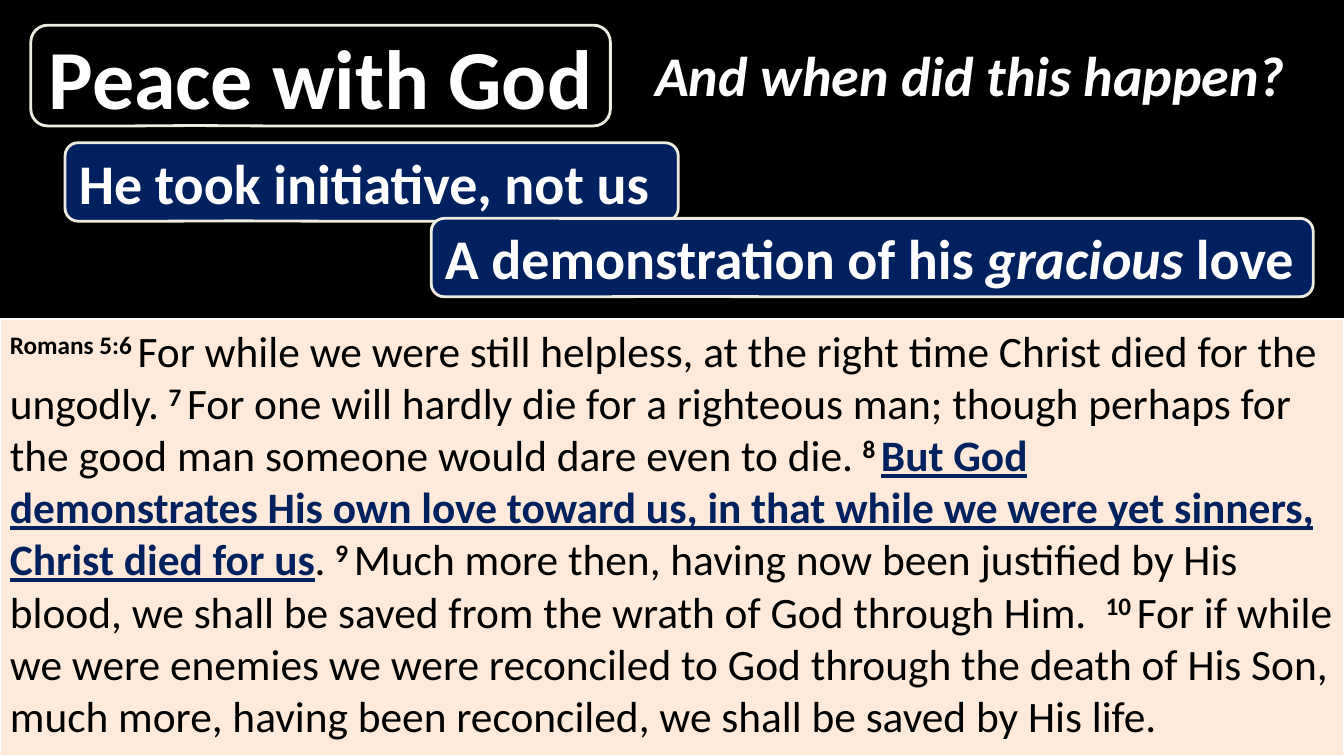
import pptx
import pptx.util
import pptx.dml.color
import pptx.enum.shapes
import pptx.enum.text
import pptx.oxml
import pptx.oxml.ns

Pt = pptx.util.Pt
SHAPES = pptx.enum.shapes.MSO_SHAPE
ALIGN = pptx.enum.text.PP_ALIGN
ANCHOR = pptx.enum.text.MSO_ANCHOR

WHITE, BLACK, NAVY, CREAM, PEACH = "FFFFFF", "000000", "002060", "EEECE1", "FDEADA"
CALLOUT_ADJUSTMENTS = (-0.219, 0.496, 0.167)
TITLE_BOX = (22, 18, 414, 72)
NO_BREAK_SPACE = chr(160)

# Each verse: number, then (text, is_key_phrase) parts; "_" stands for a no-break space
VERSES = [
    ("Romans 5:6_", [("For while we were still_helpless,_at the right time_Christ died for the ungodly._", False)]),
    ("7_", [("For one will hardly die for a righteous man; though perhaps for the good man "
             "someone would dare even to die._", False)]),
    ("8_", [("But God demonstrates_His own love toward us, in that while we were yet sinners, "
             "Christ died for us", True), ("._", False)]),
    ("9_", [("Much more then, having now been justified by His blood, we shall be saved_from the wrath_of God_"
             "through Him.  ", False)]),
    ("10_", [("For if while we were_enemies we were reconciled to God through the death of His Son, "
              "much more, having been reconciled, we shall be saved by His life._", False)]),
]


def color(value):
    return pptx.dml.color.RGBColor.from_string(value)


def paint(shape, fill, line, line_width):
    """Fill and outline a shape; None leaves that part out."""
    if fill:
        shape.fill.solid()
        shape.fill.fore_color.rgb = color(fill)
    else:
        shape.fill.background()
    if line:
        shape.line.color.rgb = color(line)
        shape.line.width = Pt(line_width)
    else:
        shape.line.fill.background()


def start_text(shape, size, ink, align, anchor):
    """Set up the text frame and return its first paragraph."""
    frame = shape.text_frame
    frame.word_wrap = True
    frame.auto_size = pptx.enum.text.MSO_AUTO_SIZE.NONE
    frame.vertical_anchor = anchor
    para = frame.paragraphs[0]
    para.alignment = align
    para.font.name = "Calibri"
    para.font.size = Pt(size)
    para.font.color.rgb = color(ink)
    return para


def add_span(para, text):
    span = para.add_run()
    span.text = text.replace("_", NO_BREAK_SPACE)
    return span


def write_heading(shape, size, align, parts):
    """Write bold white text; parts are (text, is_italic) pairs."""
    para = start_text(shape, size, WHITE, align, ANCHOR.MIDDLE)
    para.font.bold = True
    for text, is_italic in parts:
        add_span(para, text).font.italic = is_italic


def add_callout(page, box, fill, line):
    callout = page.shapes.add_shape(SHAPES.ROUNDED_RECTANGULAR_CALLOUT, *map(Pt, box))
    callout.shadow.inherit = False
    for index, value in enumerate(CALLOUT_ADJUSTMENTS):
        callout.adjustments[index] = value
    paint(callout, fill, line, 2)
    return callout


def add_title(page):
    """Set the title over a translucent callout frame."""
    frame = add_callout(page, TITLE_BOX, BLACK, CREAM)
    fill_color = frame._element.spPr.find(".//" + pptx.oxml.ns.qn("a:srgbClr"))
    fill_color.append(pptx.oxml.parse_xml(f'<a:alpha {pptx.oxml.ns.nsdecls("a")} val="64000"/>'))
    title = page.shapes.title
    title.left, title.top, title.width, title.height = map(Pt, TITLE_BOX)
    frame._element.addnext(title._element)
    write_heading(title, 60, ALIGN.CENTER, [("Peace with God", False)])


def add_passage(page):
    panel = page.shapes.add_shape(SHAPES.RECTANGLE, Pt(0), Pt(228), Pt(960), Pt(312))
    panel.shadow.inherit = False
    paint(panel, PEACH, WHITE, 1.5)
    para = start_text(panel, 31, BLACK, ALIGN.LEFT, ANCHOR.TOP)
    for number, parts in VERSES:
        marker = add_span(para, number)
        marker.font.bold = True
        marker.font._element.set("baseline", "30000")
        for text, is_key_phrase in parts:
            span = add_span(para, text)
            if is_key_phrase:
                span.font.bold = span.font.underline = True
                span.font.color.rgb = color(NAVY)


def main():
    deck = pptx.Presentation()
    deck.slide_width, deck.slide_height = Pt(960), Pt(540)
    page = deck.slides.add_slide(deck.slide_layouts[5])
    page.background.fill.solid()
    page.background.fill.fore_color.rgb = color(BLACK)

    add_passage(page)
    add_title(page)
    headings = [
        ((448, 17, 490, 72), None, None, ALIGN.CENTER, [("And when did this happen?", True)]),
        ((46.5, 102, 438, 56), NAVY, CREAM, ALIGN.LEFT, [("He took initiative, not us", False)]),
        ((308, 156, 630, 56), NAVY, CREAM, ALIGN.LEFT,
         [("A demonstration of his ", False), ("gracious", True), (" love", False)]),
    ]
    for box, fill, line, align, parts in headings:
        write_heading(add_callout(page, box, fill, line), 40, align, parts)
    deck.save("out.pptx")


if __name__ == "__main__":
    main()
